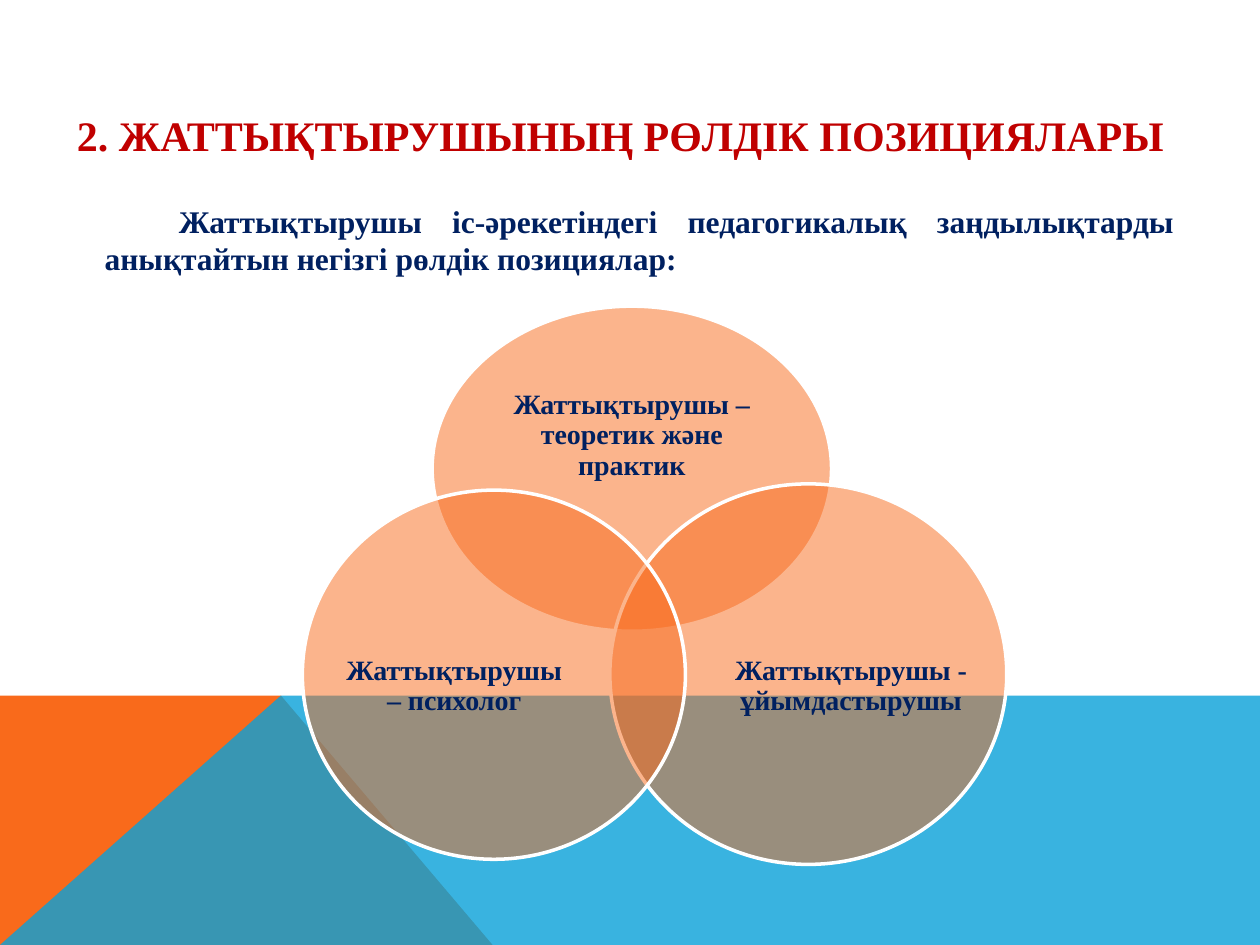
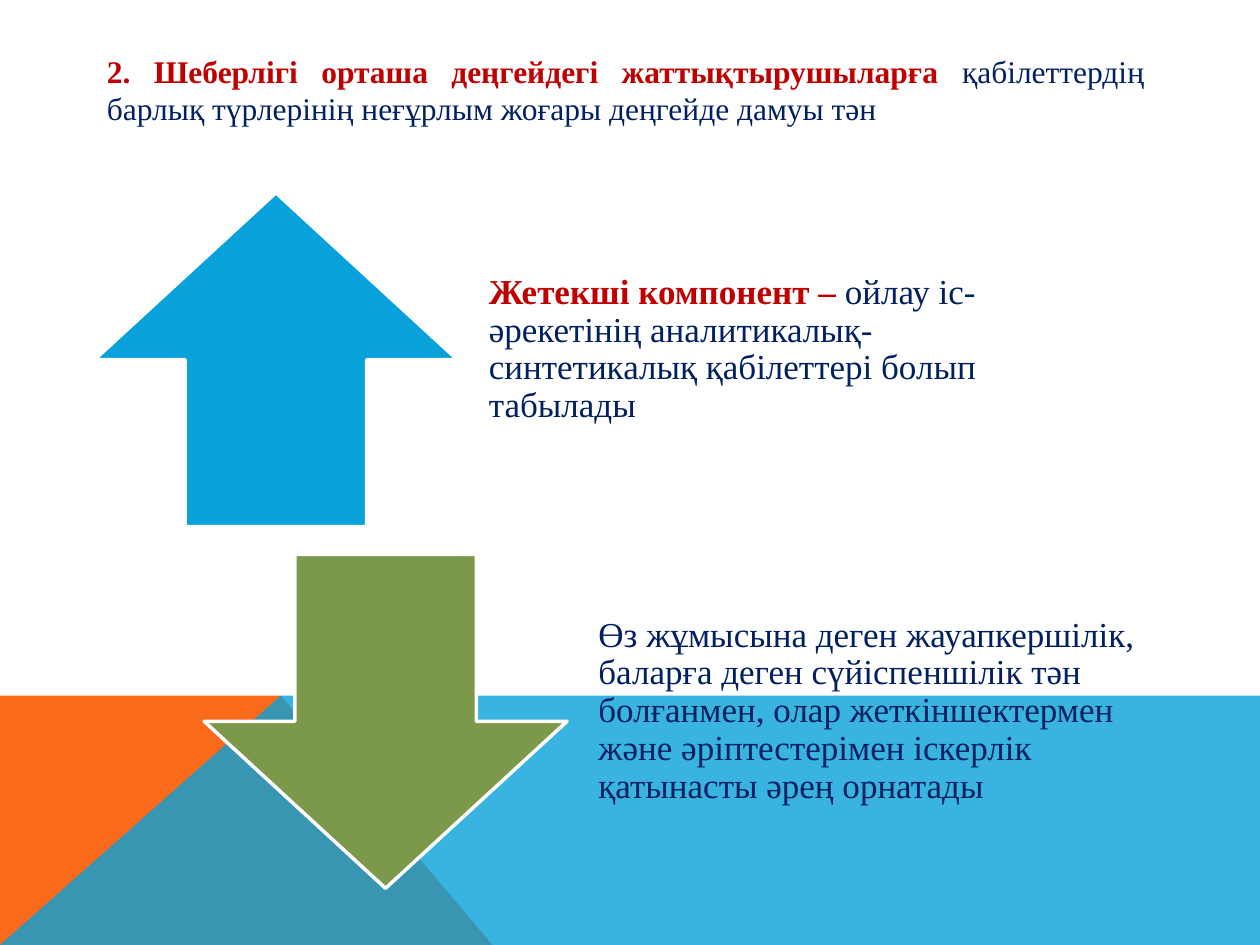
from lxml.etree import SubElement
from pptx import Presentation
from pptx.dml.color import RGBColor
from pptx.enum.shapes import MSO_SHAPE
from pptx.enum.text import MSO_ANCHOR, MSO_AUTO_SIZE, PP_ALIGN
from pptx.oxml.ns import qn
from pptx.util import Inches, Pt

FONT = "Times New Roman"
ORANGE = RGBColor(0xF9, 0x6A, 0x1B)
BLUE = RGBColor(0x08, 0xA1, 0xD9)
GREEN = RGBColor(0x7C, 0x98, 0x4A)
RED = RGBColor(0xC0, 0x00, 0x00)
NAVY = RGBColor(0x00, 0x20, 0x60)
WHITE = RGBColor(0xFF, 0xFF, 0xFF)

# The slide is a grid of square cells.
COLUMNS, ROWS = 100, 75
CELL = Inches(0.1)
BAND_TOP, BAND_PEAK, BAND_FOOT = 55.2, 22.3, 39.1
ARROW_WIDTH, ARROW_HEIGHT = 28.8, 26.5
ARROW_STEP_X, ARROW_STEP_Y = 8.7, 28.7


def cells(*counts):
    return [round(count * CELL) for count in counts]


def paint(shape, fill, opacity=100, outline=None):
    shape.shadow.inherit = False
    shape.fill.solid()
    shape.fill.fore_color.rgb = fill
    if opacity < 100:
        color = shape.element.spPr.find(".//" + qn("a:srgbClr"))
        SubElement(color, qn("a:alpha"), val=str(opacity * 1000))
    if outline is None:
        shape.line.fill.background()
    else:
        shape.line.color.rgb = outline
        shape.line.width = Pt(2)


def write(box, *spans, size=18, align=PP_ALIGN.LEFT, anchor=MSO_ANCHOR.TOP,
          spacing=1.0, insets=None):
    """Fill a box with one paragraph; each span is (text, colour, bold)."""
    frame = box.text_frame
    frame.word_wrap = True
    frame.auto_size = MSO_AUTO_SIZE.NONE
    frame.vertical_anchor = anchor
    if insets is not None:
        (frame.margin_left, frame.margin_top,
         frame.margin_right, frame.margin_bottom) = cells(*insets)
    para = frame.paragraphs[0]
    para.alignment = align
    para.line_spacing = spacing
    para.space_before = Pt(0)
    for text, color, bold in spans:
        span = para.add_run()
        span.text = text
        span.font.name = FONT
        span.font.size = Pt(size)
        span.font.bold = bold
        span.font.color.rgb = color
    return para


def move(placeholder, *area):
    (placeholder.left, placeholder.top,
     placeholder.width, placeholder.height) = cells(*area)


def add_shape(page, kind, area, fill, opacity=100):
    shape = page.shapes.add_shape(kind, *cells(*area))
    paint(shape, fill, opacity, WHITE)


def add_text(page, area, *spans, **style):
    write(page.shapes.add_textbox(*cells(*area)), *spans, **style)


def add_master_bands(deck, page):
    """Draw the footer bands on a page, then move them to the master."""
    bands = [
        ([(0, ROWS), (0, BAND_TOP), (BAND_PEAK, BAND_TOP), (BAND_FOOT, ROWS)],
         ORANGE, 100),
        ([(0, ROWS), (BAND_PEAK, BAND_TOP), (COLUMNS, BAND_TOP),
          (COLUMNS, ROWS)], BLUE, 80),
    ]
    tree = deck.slide_master.element.cSld.spTree
    for order, (points, fill, opacity) in enumerate(bands):
        corners = [cells(*point) for point in points]
        builder = page.shapes.build_freeform(*corners[0])
        builder.add_line_segments(corners[1:], close=True)
        band = builder.convert_to_shape()
        paint(band, fill, opacity)
        band.element.nvSpPr.cNvPr.set("id", str(100 + order))
        tree.insert(2 + order, band.element)


def fill_roles_page(page):
    title, body = page.shapes.title, page.placeholders[1]
    move(title, 5.1, 6.8, 90, 7.7)
    write(title, ("2. ЖАТТЫҚТЫРУШЫНЫҢ РӨЛДІК ПОЗИЦИЯЛАРЫ", RED, True),
          size=24, anchor=MSO_ANCHOR.MIDDLE)
    move(body, 3.5, 15.5, 90.7, 7.1)
    para = write(body, ("Жаттықтырушы іс-әрекетіндегі педагогикалық "
                        "заңдылықтарды анықтайтын негізгі рөлдік позициялар:",
                        NAVY, True), align=PP_ALIGN.JUSTIFY)
    properties = para._p.get_or_add_pPr()
    left, first_line = cells(3.8, 5.9)
    properties.set("marL", str(left))
    properties.set("indent", str(first_line))
    SubElement(properties, qn("a:buNone"))

    roles = [
        ("Жаттықтырушы – теоретик және практик",
         (34.3, 24.3, 31.7, 25.8), (38.5, 28.8, 23.3, 11.6)),
        ("Жаттықтырушы - ұйымдастырушы",
         (48.4, 38.4, 31.5, 30.2), (58.1, 46.2, 18.9, 16.6)),
        ("Жаттықтырушы – психолог",
         (24, 38.9, 30.4, 29.3), (26.9, 46.4, 18.3, 16.1)),
    ]
    for role, circle, label in roles:
        add_shape(page, MSO_SHAPE.OVAL, circle, ORANGE, opacity=50)
        add_text(page, label, (role, NAVY, True), size=16, spacing=0.9,
                 align=PP_ALIGN.CENTER, anchor=MSO_ANCHOR.MIDDLE,
                 insets=(0, 0, 0, 0))


def fill_skill_page(page):
    add_text(page, (7.5, 3.6, 84.3, 7.1),
             ("2. Шеберлігі орташа деңгейдегі жаттықтырушыларға ", RED, True),
             ("қабілеттердің барлық түрлерінің неғұрлым жоғары деңгейде "
              "дамуы тән", NAVY, False), align=PP_ALIGN.JUSTIFY)
    traits = [
        (MSO_SHAPE.UP_ARROW, BLUE,
         [("Жетекші компонент – ", RED, True),
          ("ойлау іс-әрекетінің аналитикалық-синтетикалық қабілеттері "
           "болып табылады", NAVY, False)]),
        (MSO_SHAPE.DOWN_ARROW, GREEN,
         [("Өз жұмысына деген жауапкершілік, баларға деген сүйіспеншілік "
           "тән болғанмен, олар жеткіншектермен және әріптестерімен "
           "іскерлік қатынасты әрең орнатады", NAVY, False)]),
    ]
    for order, (arrow, fill, spans) in enumerate(traits):
        left = 7.5 + order * ARROW_STEP_X
        top = 15.3 + order * ARROW_STEP_Y
        add_shape(page, arrow, (left, top, ARROW_WIDTH, ARROW_HEIGHT), fill)
        add_text(page, (left + ARROW_WIDTH + 0.9, top, 49, ARROW_HEIGHT),
                 *spans, size=20, spacing=0.9, anchor=MSO_ANCHOR.MIDDLE,
                 insets=(1.6, 0, 1.6, 1.6))


def main():
    deck = Presentation()
    deck.slide_width, deck.slide_height = COLUMNS * CELL, ROWS * CELL
    roles_page = deck.slides.add_slide(deck.slide_layouts.get_by_name("Title and Content"))
    skill_page = deck.slides.add_slide(deck.slide_layouts.get_by_name("Blank"))
    add_master_bands(deck, roles_page)
    fill_roles_page(roles_page)
    fill_skill_page(skill_page)
    deck.save("out.pptx")


if __name__ == "__main__":
    main()
